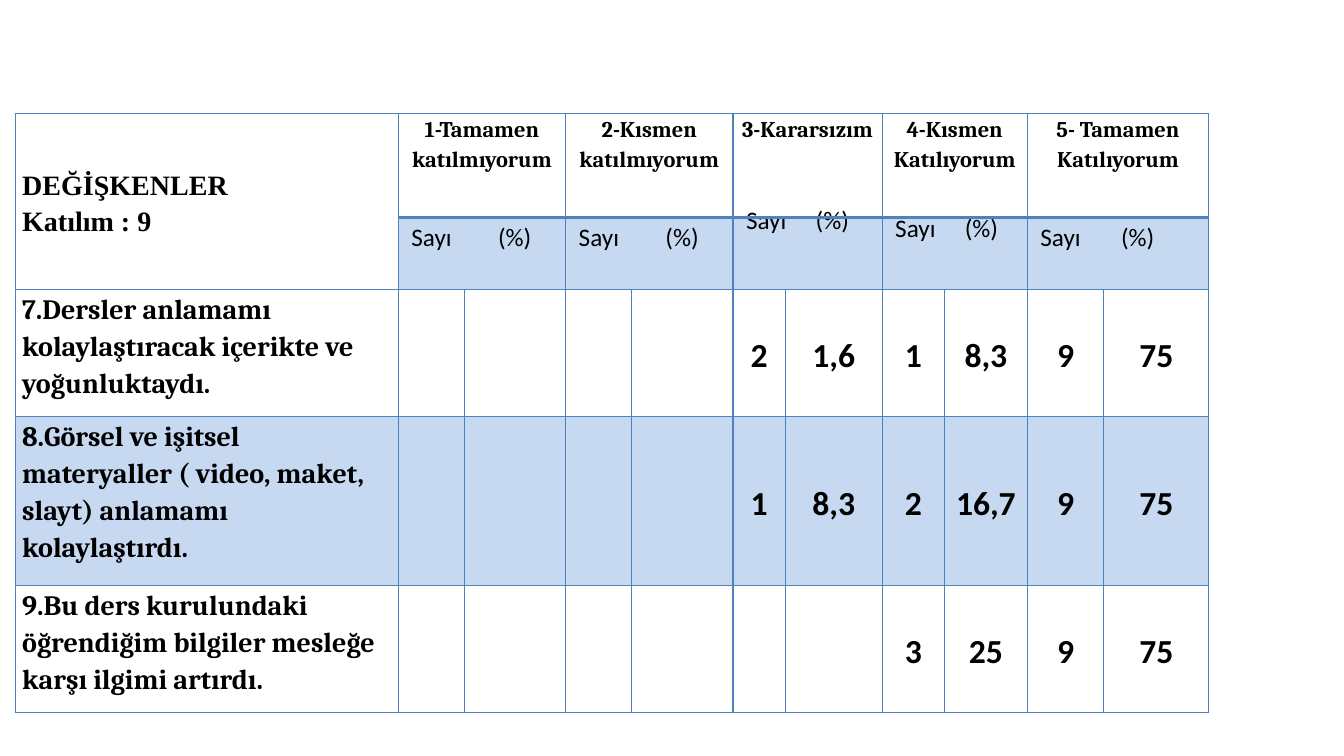
from dataclasses import dataclass

from lxml import etree
from pptx import Presentation
from pptx.dml.color import RGBColor
from pptx.enum import text as t
from pptx.oxml import ns
from pptx.util import Inches, Pt


@dataclass(frozen=True)
class Theme:
    ink: str = "000000"
    line: str = "4F81BD"
    band: str = "C6D9F1"
    thin: float = 1
    thick: float = 2.25
    head: int = 16
    unit: int = 18
    label: int = 20
    value: int = 24
    serif: str = "Cambria"
    sans: str = "Calibri"
    title: str = "Times New Roman"


THEME = Theme()
COLS = [3.8, 0.66, 1, 0.65, 1.01, 0.52, 0.96, 0.62, 0.82, 0.76, 1.04]
ROWS = [1.03, 0.71, 1.26, 1.68, 1.26]

# Answer heading, place of the (%) tab, space under the unit line
SCALE = [
    ("1-Tamamen katılmıyorum", 0.86, 0.18),
    ("2-Kısmen katılmıyorum", 0.86, 0.18),
    ("3-Kararsızım", 0.69, 0.53),
    ("4-Kısmen Katılıyorum", 0.69, 0.36),
    ("5- Tamamen Katılıyorum", 0.8, 0.18),
]
ITEMS = [
    ("7.Dersler anlamamı kolaylaştıracak içerikte ve yoğunluktaydı.",
     ["", "", "", "", "2", "1,6", "1", "8,3", "9", "75"]),
    ("8.Görsel ve işitsel materyaller ( video, maket, slayt) anlamamı kolaylaştırdı.",
     ["", "", "", "", "1", "8,3", "2", "16,7", "9", "75"]),
    ("9.Bu ders kurulundaki öğrendiğim bilgiler mesleğe karşı ilgimi artırdı.",
     ["", "", "", "", "", "", "3", "25", "9", "75"]),
]


def write(cell, words, size, font, bold=True, center=False, middle=False,
          space=1.15, left=0.07, bottom=0, tab=None):
    """Fill a cell with one paragraph for each line of words."""
    cell.margin_left, cell.margin_right = Inches(left), Inches(0.07)
    cell.margin_top, cell.margin_bottom = Inches(0), Inches(bottom)
    cell.vertical_anchor = t.MSO_ANCHOR.MIDDLE if middle else t.MSO_ANCHOR.TOP
    frame = cell.text_frame
    for i, line in enumerate(words.split("\n")):
        para = frame.add_paragraph() if i else frame.paragraphs[0]
        para.alignment = t.PP_ALIGN.CENTER if center else t.PP_ALIGN.LEFT
        para.line_spacing = space
        if tab:
            stops = etree.SubElement(para._p.get_or_add_pPr(), ns.qn("a:tabLst"))
            etree.SubElement(stops, ns.qn("a:tab"), pos=str(Inches(tab)), algn="l")
        run = para.add_run()
        run.text = line
        run.font.size, run.font.name, run.font.bold = Pt(size), font, bold
        run.font.color.rgb = RGBColor.from_string(THEME.ink)


def edge(cell, top, bottom):
    """Draw the four borders; the sides are thin."""
    props = cell._tc.get_or_add_tcPr()
    sides = {"L": THEME.thin, "R": THEME.thin, "T": top, "B": bottom}
    for side, width in sides.items():
        line = etree.SubElement(props, ns.qn(f"a:ln{side}"), w=str(Pt(width)))
        fill = etree.SubElement(line, ns.qn("a:solidFill"))
        etree.SubElement(fill, ns.qn("a:srgbClr"), val=THEME.line)


def paint(cell, shade):
    if shade:
        cell.fill.solid()
        cell.fill.fore_color.rgb = RGBColor.from_string(THEME.band)
    else:
        cell.fill.background()


def add_grid(slide):
    frame = slide.shapes.add_table(len(ROWS), len(COLS), Inches(0.15), Inches(1.13),
                                   Inches(sum(COLS)), Inches(sum(ROWS)))
    grid = frame.table
    grid.first_row = grid.horz_banding = False
    for col, width in zip(grid.columns, COLS):
        col.width = Inches(width)
    for r, height in enumerate(ROWS):
        grid.rows[r].height = Inches(height)
        for c in range(len(COLS)):
            cell = grid.cell(r, c)
            edge(cell, THEME.thick if r == 1 and c else THEME.thin,
                 THEME.thick if r == 0 and c else THEME.thin)
            paint(cell, r == 3 or (r == 1 and c > 0))
    return grid


def add_heads(grid):
    corner = grid.cell(0, 0)
    corner.merge(grid.cell(1, 0))
    write(corner, "DEĞİŞKENLER\nKatılım : 9", THEME.label, THEME.title, middle=True)
    for i, (name, tab, bottom) in enumerate(SCALE):
        c = 1 + 2 * i
        for r in (0, 1):
            grid.cell(r, c).merge(grid.cell(r, c + 1))
        write(grid.cell(0, c), name, THEME.head, THEME.serif, center=True)
        write(grid.cell(1, c), "Sayı\t(%)", THEME.unit, THEME.sans, bold=False,
              middle=True, space=Pt(13), left=0.13, bottom=bottom, tab=tab)


def add_items(grid):
    for r, (label, values) in enumerate(ITEMS, 2):
        write(grid.cell(r, 0), label, THEME.label, THEME.serif)
        for c, value in enumerate(values, 1):
            if value:
                write(grid.cell(r, c), value, THEME.value, THEME.sans,
                      center=True, middle=True)


def main():
    deck = Presentation()
    deck.slide_width, deck.slide_height = Inches(13.33), Inches(7.5)
    slide = deck.slides.add_slide(deck.slide_layouts[6])
    grid = add_grid(slide)
    add_heads(grid)
    add_items(grid)
    deck.save("out.pptx")


if __name__ == "__main__":
    main()
